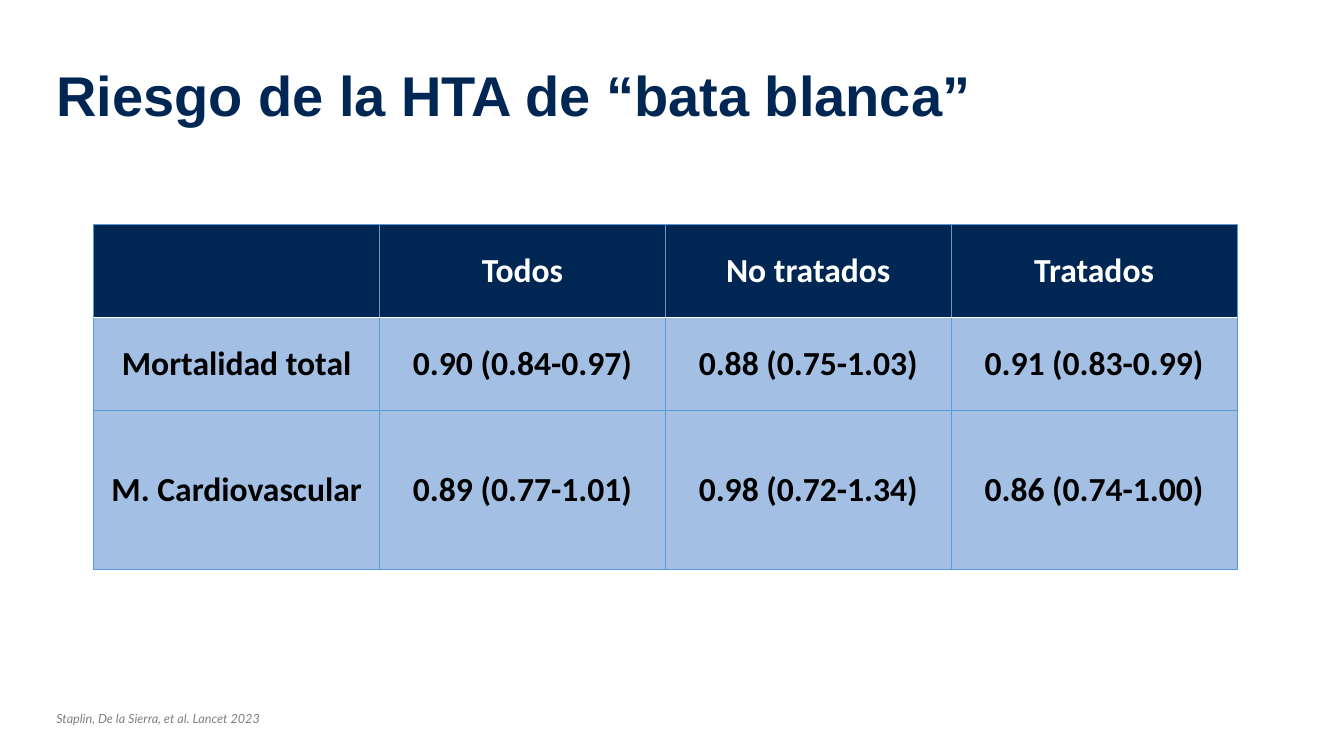
from dataclasses import dataclass

from lxml.etree import SubElement
from pptx import Presentation
from pptx.dml.color import RGBColor as RGB
from pptx.enum.text import MSO_ANCHOR as Anchor, PP_ALIGN as Align
from pptx.oxml.ns import qn
from pptx.util import Inches, Pt

TITLE = "Riesgo de la HTA de “bata blanca”"
SOURCE = "Staplin, De la Sierra, et al. Lancet 2023"
RISKS = [
    ["", "Todos", "No tratados", "Tratados"],
    ["Mortalidad total", "0.90 (0.84-0.97)", "0.88 (0.75-1.03)", "0.91 (0.83-0.99)"],
    ["M. Cardiovascular", "0.89 (0.77-1.01)", "0.98 (0.72-1.34)", "0.86 (0.74-1.00)"],
]
HEIGHTS = [0.92, 0.92, 1.58]
LEFT, TOP, WIDTH = 0.93, 2.23, 11.34


@dataclass(frozen=True)
class Theme:
    navy: str = "002754"
    pale: str = "A3C0E4"
    edge: str = "5B9BD5"
    white: str = "FFFFFF"
    black: str = "000000"
    gray: str = "808080"
    head: str = "Arial"
    body: str = "Calibri"
    note: str = "Lato"
    head_size: int = 40
    body_size: int = 24
    note_size: int = 9


theme = Theme()


def add_run(para, text, face, size, color, bold=False, italic=False):
    run = para.add_run()
    run.text = text
    font = run.font
    font.name, font.size = face, Pt(size)
    font.bold, font.italic = bold, italic
    font.color.rgb = RGB.from_string(color)


def add_box(slide, left, top, width, height, wrap):
    box = slide.shapes.add_textbox(*map(Inches, (left, top, width, height)))
    box.text_frame.word_wrap = wrap
    return box.text_frame


def add_edge(cell, side, color, width):
    props = cell._tc.get_or_add_tcPr()
    line = SubElement(props, qn("a:ln" + side), w=str(Pt(width)))
    fill = SubElement(line, qn("a:solidFill"))
    SubElement(fill, qn("a:srgbClr"), val=color)


def fill_cell(cell, text, row):
    """Draw borders before the fill, as the cell schema requires."""
    for side in "LRTB":
        seam = (row, side) in ((0, "B"), (1, "T"))
        color, width = (theme.white, 1) if seam else (theme.edge, 0.5)
        add_edge(cell, side, color, width)
    ground, ink = (theme.pale, theme.black) if row else (theme.navy, theme.white)
    cell.fill.solid()
    cell.fill.fore_color.rgb = RGB.from_string(ground)
    cell.vertical_anchor = Anchor.MIDDLE
    para = cell.text_frame.paragraphs[0]
    para.alignment = Align.CENTER
    if text:
        add_run(para, text, theme.body, theme.body_size, ink, bold=True)


def add_risks(slide):
    rows, cols = len(RISKS), len(RISKS[0])
    area = map(Inches, (LEFT, TOP, WIDTH, sum(HEIGHTS)))
    table = slide.shapes.add_table(rows, cols, *area).table
    for col in table.columns:
        col.width = Inches(WIDTH / cols)
    for r, (texts, height) in enumerate(zip(RISKS, HEIGHTS)):
        table.rows[r].height = Inches(height)
        for c, text in enumerate(texts):
            fill_cell(table.cell(r, c), text, r)


def main():
    deck = Presentation()
    deck.slide_width, deck.slide_height = Inches(13.33), Inches(7.5)
    slide = deck.slides.add_slide(deck.slide_layouts[6])

    title = add_box(slide, 0.46, 0.25, 10.13, 1.45, True)
    title.vertical_anchor = Anchor.MIDDLE
    para = title.paragraphs[0]
    para.line_spacing = 0.9
    add_run(para, TITLE, theme.head, theme.head_size, theme.navy, bold=True)

    add_risks(slide)

    note = add_box(slide, 0.46, 7, 2.39, 0.25, False)
    add_run(note.paragraphs[0], SOURCE, theme.note, theme.note_size,
            theme.gray, italic=True)
    deck.save("out.pptx")


if __name__ == "__main__":
    main()
